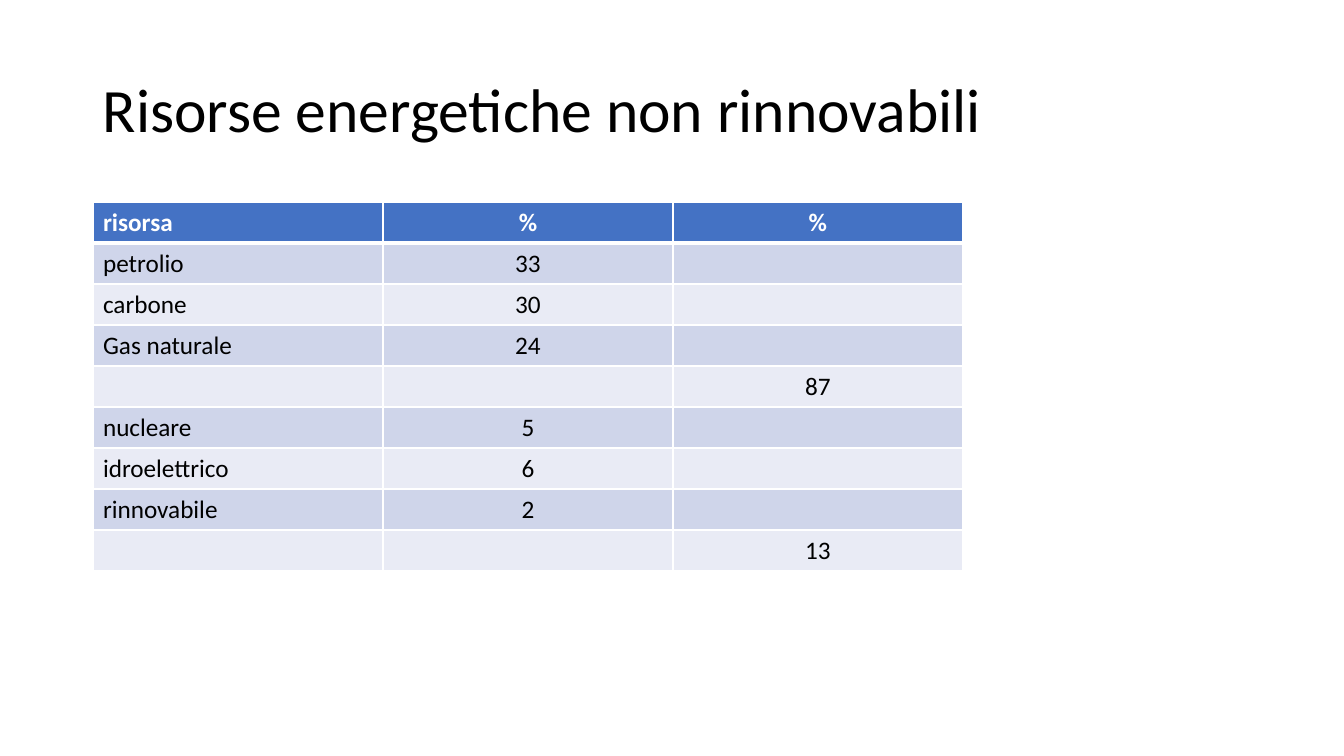
from lxml import etree
from pptx import Presentation, util as u
from pptx.dml.color import RGBColor
from pptx.enum import text
from pptx.oxml.ns import qn

SCALE = 914400 / 100.8  # EMU per px


def px(*vals):
    return [u.Emu(round(v * SCALE)) for v in vals]


def style(para, size, color, bold=False, align=text.PP_ALIGN.LEFT):
    para.alignment = align
    look = {"name": "Calibri", "size": u.Pt(size), "bold": bold}
    for key, val in look.items():
        setattr(para.font, key, val)
    para.font.color.rgb = RGBColor.from_string(color)


deck = Presentation()
deck.slide_width, deck.slide_height = px(1344, 756)
slide = deck.slides.add_slide(deck.slide_layouts[6])

# Title
title = slide.shapes.add_textbox(*px(93, 40, 1159, 146)).text_frame
frame = {"word_wrap": True, "vertical_anchor": text.MSO_ANCHOR.MIDDLE}
for key, val in frame.items():
    setattr(title, key, val)
head = title.paragraphs[0]
head.text = "Risorse energetiche non rinnovabili"
head.line_spacing = 0.9
style(head, 44, "000000")

# Table of sources, with subtotals in the last column
rows = [
    ("risorsa", "%", "%"),
    ("petrolio", "33", ""),
    ("carbone", "30", ""),
    ("Gas naturale", "24", ""),
    ("", "", "87"),
    ("nucleare", "5", ""),
    ("idroelettrico", "6", ""),
    ("rinnovabile", "2", ""),
    ("", "", "13"),
]
WIDE, HIGH = 290, 41
table = slide.shapes.add_table(
    len(rows), 3, *px(93, 202, 3 * WIDE, len(rows) * HIGH)).table
for col in table.columns:
    col.width = px(WIDE)[0]
for row in table.rows:
    row.height = px(HIGH)[0]

for r, row in enumerate(rows):
    first = r == 0
    fill = "4472C4" if first else ("E9EBF5", "CFD5EA")[r % 2]
    for c, word in enumerate(row):
        cell = table.cell(r, c)
        cell.text = word
        style(cell.text_frame.paragraphs[0], 18,
              "FFFFFF" if first else "000000", first,
              text.PP_ALIGN.CENTER if c else text.PP_ALIGN.LEFT)

        # White borders, thicker below the header row
        props = cell._tc.get_or_add_tcPr()
        for side in "LRTB":
            thick = (r, side) in ((0, "B"), (1, "T"))
            line = etree.SubElement(props, qn("a:ln" + side),
                                    w=str(u.Pt(3 if thick else 1)))
            paint = etree.SubElement(line, qn("a:solidFill"))
            etree.SubElement(paint, qn("a:srgbClr"), val="FFFFFF")
        cell.fill.solid()
        cell.fill.fore_color.rgb = RGBColor.from_string(fill)

deck.save("out.pptx")
